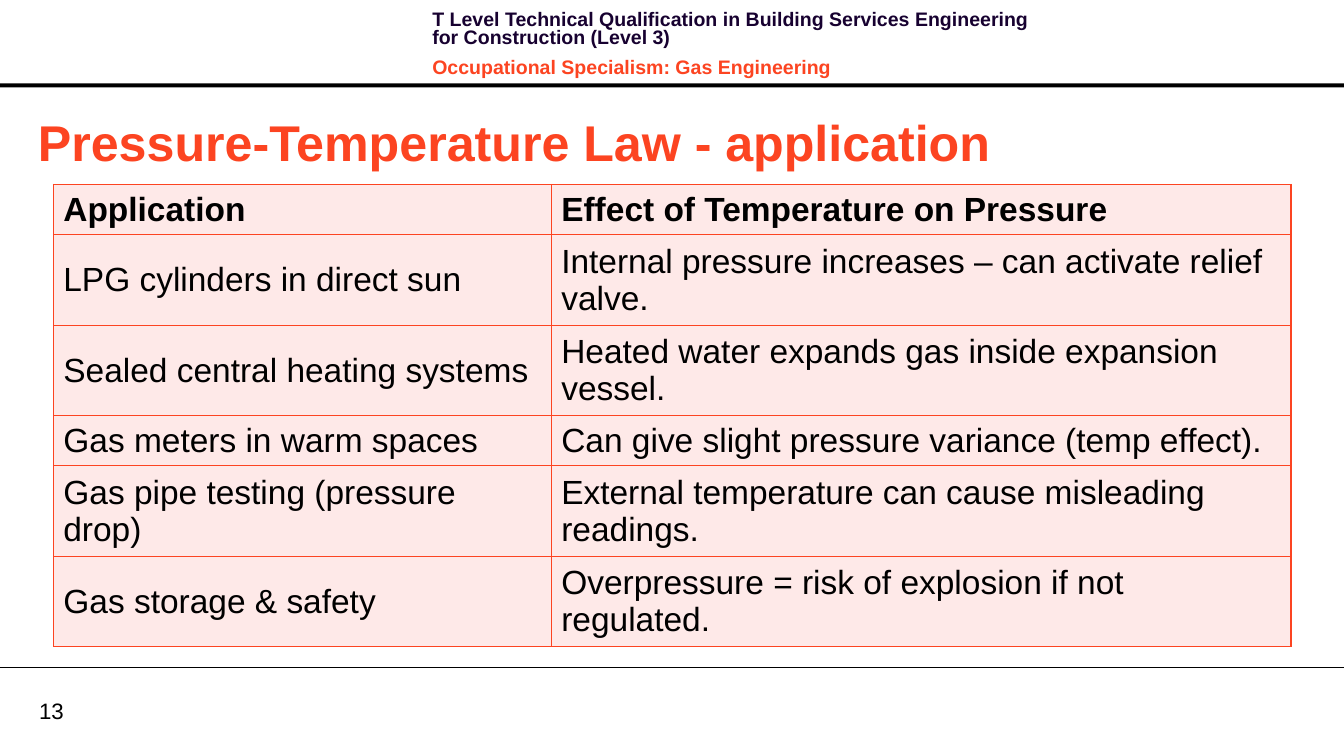
from dataclasses import dataclass

from lxml import etree
from pptx import Presentation
from pptx import util as u
from pptx.dml.color import RGBColor
from pptx.enum import shapes, text
from pptx.oxml import ns


@dataclass(frozen=True)
class Theme:
    font: str = "Arial"
    accent: str = "FC4421"
    navy: str = "170130"
    black: str = "000000"
    tint: str = "FEE9E8"
    title_size: int = 36
    table_size: int = 24
    number_size: int = 16
    header_size: int = 14


@dataclass(frozen=True)
class Box:
    left: float
    top: float
    width: float
    height: float

    def lengths(self):
        return [u.Cm(n) for n in (self.left, self.top, self.width, self.height)]


THEME = Theme()
PAGE = Box(0, 0, 34.01, 19)
HEADER = Box(0, 0, PAGE.width, 2.21)
TITLE = Box(0.71, 2.67, 32.31, 1.8)
TABLE = Box(1.35, 4.67, 31.32, 11.66)
FOOTER = Box(0, 16.89, PAGE.width, 2.11)

ROWS = [
    ("Application", "Effect of Temperature on Pressure"),
    ("LPG cylinders in direct sun",
     "Internal pressure increases – can activate relief valve."),
    ("Sealed central heating systems",
     "Heated water expands gas inside expansion vessel."),
    ("Gas meters in warm spaces",
     "Can give slight pressure variance (temp effect)."),
    ("Gas pipe testing (pressure drop)",
     "External temperature can cause misleading readings."),
    ("Gas storage & safety",
     "Overpressure = risk of explosion if not regulated."),
]


def rgb(value):
    return RGBColor.from_string(value)


def set_values(target, values):
    for name, value in values.items():
        setattr(target, name, value)


def write(para, words, size, color=THEME.black, bold=False, **spacing):
    set_values(para, spacing)
    span = para.add_run()
    span.text = words
    set_values(span.font, {"name": THEME.font, "size": u.Pt(size), "bold": bold})
    span.font.color.rgb = rgb(color)


def add_text_frame(page, box, **values):
    frame = page.shapes.add_textbox(*box.lengths()).text_frame
    set_values(frame, {"word_wrap": True, **values})
    return frame


def add_header(page, box):
    # Course name and specialism
    frame = add_text_frame(page, Box(box.left + 10.69, box.top + 0.18, 16.18, 1.63))
    spacing = {"line_spacing": u.Pt(13.1), "space_after": u.Pt(4)}
    write(frame.paragraphs[0],
          "T Level Technical Qualification in Building Services Engineering "
          "for Construction (Level 3)",
          THEME.header_size, THEME.navy, True, **spacing)
    write(frame.add_paragraph(), "Occupational Specialism: Gas Engineering",
          THEME.header_size, THEME.accent, True, space_before=u.Pt(4), **spacing)

    # Thick rule along the bottom edge
    thickness = 0.1
    rule_box = Box(box.left, box.top + box.height - thickness, box.width, thickness)
    rule = page.shapes.add_shape(shapes.MSO_SHAPE.RECTANGLE, *rule_box.lengths())
    rule.shadow.inherit = False
    rule.fill.solid()
    rule.fill.fore_color.rgb = rgb(THEME.black)
    rule.line.fill.background()


def add_title(page, box):
    frame = add_text_frame(page, box, vertical_anchor=text.MSO_ANCHOR.MIDDLE)
    write(frame.paragraphs[0], "Pressure-Temperature Law - application",
          THEME.title_size, THEME.accent, True)


def set_borders(cell, color, width):
    properties = cell._tc.get_or_add_tcPr()
    for place, side in enumerate(("a:lnL", "a:lnR", "a:lnT", "a:lnB")):
        line = etree.Element(ns.qn(side), w=str(u.Pt(width)))
        fill = etree.SubElement(line, ns.qn("a:solidFill"))
        etree.SubElement(fill, ns.qn("a:srgbClr"), val=color)
        properties.insert(place, line)


def add_effects_table(page, box):
    table = page.shapes.add_table(len(ROWS), 2, *box.lengths()).table
    set_values(table, {"first_row": False, "horz_banding": False})
    first_width = 12.6
    for column, width in zip(table.columns, (first_width, box.width - first_width)):
        column.width = u.Cm(width)

    for index, (row, values) in enumerate(zip(table.rows, ROWS)):
        row.height = u.Cm(1)  # rows grow to hold their text
        for cell, words in zip(row.cells, values):
            cell.vertical_anchor = text.MSO_ANCHOR.MIDDLE
            cell.fill.solid()
            cell.fill.fore_color.rgb = rgb(THEME.tint)
            set_borders(cell, THEME.accent, 1)
            write(cell.text_frame.paragraphs[0], words, THEME.table_size,
                  bold=index == 0)


def add_footer(page, box):
    # Thin rule along the top edge
    left, top, width, _ = box.lengths()
    rule = page.shapes.add_connector(
        shapes.MSO_CONNECTOR.STRAIGHT, left, top, left + width, top)
    rule.line.color.rgb = rgb(THEME.black)
    rule.line.width = u.Pt(0.75)
    etree.SubElement(rule._element.spPr, ns.qn("a:effectLst"))

    # Page number
    sides = ("left", "top", "right", "bottom")
    frame = add_text_frame(
        page, Box(box.left + 0.99, box.top + 0.74, 1.63, 0.69),
        vertical_anchor=text.MSO_ANCHOR.MIDDLE,
        **{f"margin_{side}": 0 for side in sides})
    write(frame.paragraphs[0], "13", THEME.number_size)


def main():
    deck = Presentation()
    set_values(deck, {"slide_width": u.Cm(PAGE.width),
                      "slide_height": u.Cm(PAGE.height)})
    page = deck.slides.add_slide(deck.slide_layouts[6])
    add_header(page, HEADER)
    add_footer(page, FOOTER)
    add_title(page, TITLE)
    add_effects_table(page, TABLE)
    deck.save("out.pptx")


if __name__ == "__main__":
    main()
